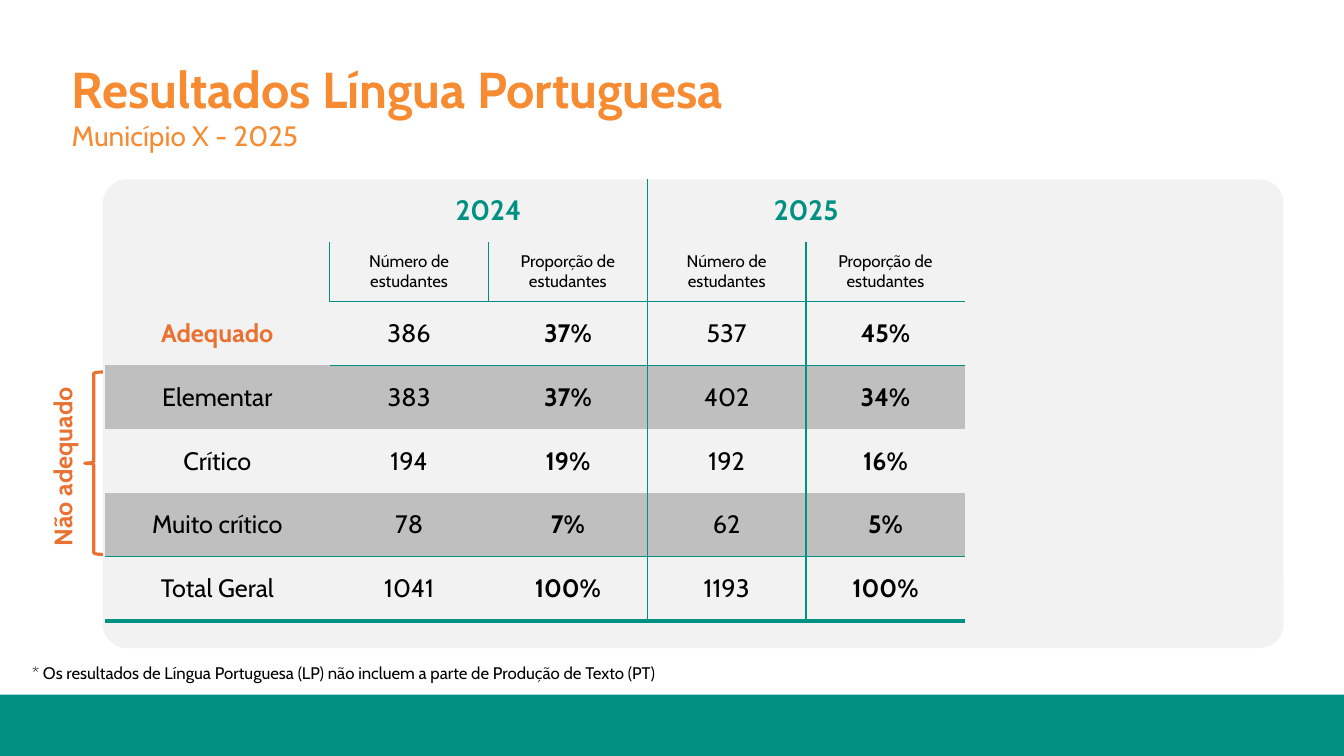
from lxml.etree import SubElement
from pptx import Presentation
from pptx.dml.color import RGBColor
from pptx.enum.shapes import MSO_SHAPE
from pptx.enum.text import MSO_ANCHOR, PP_ALIGN
from pptx.oxml.ns import qn
from pptx.util import Inches, Pt

TEAL, ORANGE, TITLE_ORANGE = "009183", "E97132", "F68B32"


def color(value):
    return RGBColor.from_string(value)


def write(paragraph, text, size, font_color, bold=False, alignment=PP_ALIGN.LEFT):
    paragraph.text = text
    paragraph.alignment = alignment
    font = paragraph.runs[0].font
    formats = {"name": "Cabin", "size": Pt(size), "bold": bold}
    for name, value in formats.items():
        setattr(font, name, value)
    font.color.rgb = color(font_color)


presentation = Presentation()
presentation.slide_width = Inches(13.33)
presentation.slide_height = Inches(7.5)
slide = presentation.slides.add_slide(presentation.slide_layouts[5])

panels = [
    (MSO_SHAPE.RECTANGLE, 0, 6.89, 13.33, 0.61, "009182"),
    (MSO_SHAPE.ROUNDED_RECTANGLE, 1.02, 1.78, 11.71, 4.65, "F2F2F2"),
]
for kind, left, top, width, height, fill in panels:
    panel = slide.shapes.add_shape(kind, Inches(left), Inches(top), Inches(width), Inches(height))
    panel.shadow.inherit = False
    panel.fill.solid()
    panel.fill.fore_color.rgb = color(fill)
    panel.line.fill.background()
panel.adjustments[0] = 0.051

title = slide.shapes.title
title_box = {"left": 0.61, "top": 0.53, "width": 12.11, "height": 1.04}
for name, value in title_box.items():
    setattr(title, name, Inches(value))
title_frame = title.text_frame
title_frame.word_wrap = True
title_frame.vertical_anchor = MSO_ANCHOR.TOP
write(title_frame.paragraphs[0], "Resultados Língua Portuguesa", 36, TITLE_ORANGE, True)
write(title_frame.add_paragraph(), "Município X - 2025", 20, TITLE_ORANGE)

subheads = ["Número de estudantes", "Proporção de estudantes"]
rows = [
    ["", "2024", "", "2025", ""],
    ["", *subheads, *subheads],
    ["Adequado", "386", "37%", "537", "45%"],
    ["Elementar", "383", "37%", "402", "34%"],
    ["Crítico", "194", "19%", "192", "16%"],
    ["Muito crítico", "78", "7%", "62", "5%"],
    ["Total Geral", "1041", "100%", "1193", "100%"],
]
table_frame = slide.shapes.add_table(7, 5, Inches(1.04), Inches(1.78), Inches(8.53), Inches(4.38))
for style in table_frame.element.iter(qn("a:tableStyleId")):
    style.text = "{2D5ABB26-0587-4C30-8999-92F81FD0307C}"
table = table_frame.table
table.first_row = table.horz_banding = False
for index, column in enumerate(table.columns):
    column.width = Inches(6.3) // 4 if index else Inches(2.23)
row_heights = [Inches(0.62), Inches(0.59)] + [Inches(3.17) // 5] * 5
for row, height in zip(table.rows, row_heights):
    row.height = height
table.cell(0, 0).merge(table.cell(1, 0))
table.cell(0, 1).merge(table.cell(0, 2))
table.cell(0, 3).merge(table.cell(0, 4))

for row_index, values in enumerate(rows):
    for column_index, value in enumerate(values):
        cell = table.cell(row_index, column_index)
        borders = {
            "L": column_index == 3 or (row_index, column_index) == (1, 1),
            "R": column_index == 2 or (row_index, column_index) == (0, 1),
            "T": row_index == 6 or (row_index == 2 and column_index > 0),
            "B": {1: int(column_index > 0), 5: 1, 6: 3}.get(row_index, 0),
        }
        properties = cell._tc.get_or_add_tcPr()
        for side, points in borders.items():
            if points:
                line = SubElement(properties, qn(f"a:ln{side}"), w=str(Pt(int(points))))
                SubElement(SubElement(line, qn("a:solidFill")), qn("a:srgbClr"), val=TEAL)
        if row_index in (3, 5):
            cell.fill.solid()
            cell.fill.fore_color.rgb = color("BFBFBF")
        else:
            cell.fill.background()
        cell.vertical_anchor = MSO_ANCHOR.MIDDLE
        if value:
            size = {0: 20, 1: 12}.get(row_index, 18)
            bold = row_index == 0 or value == "Adequado" or value.endswith("%")
            font_color = TEAL if row_index == 0 else ORANGE if value == "Adequado" else "000000"
            write(cell.text_frame.paragraphs[0], value, size, font_color, bold, PP_ALIGN.CENTER)

brace = slide.shapes.add_shape(MSO_SHAPE.LEFT_BRACE, Inches(0.84), Inches(3.69), Inches(0.18), Inches(1.81))
brace.shadow.inherit = False
brace.fill.background()
brace.line.color.rgb = color(ORANGE)
brace.line.width = Pt(2.25)

brace_label = slide.shapes.add_textbox(Inches(-0.31), Inches(4.43), Inches(1.86), Inches(0.4))
brace_label.rotation = 270
brace_label.text_frame.word_wrap = False
write(brace_label.text_frame.paragraphs[0], "Não adequado", 18, ORANGE, True, PP_ALIGN.CENTER)

footnote = slide.shapes.add_textbox(Inches(0.22), Inches(6.53), Inches(11.3), Inches(0.3))
footnote.text_frame.word_wrap = True
write(
    footnote.text_frame.paragraphs[0],
    "* Os resultados de Língua Portuguesa (LP) não incluem a parte de Produção de Texto (PT)",
    12,
    "000000",
)

presentation.save("out.pptx")
